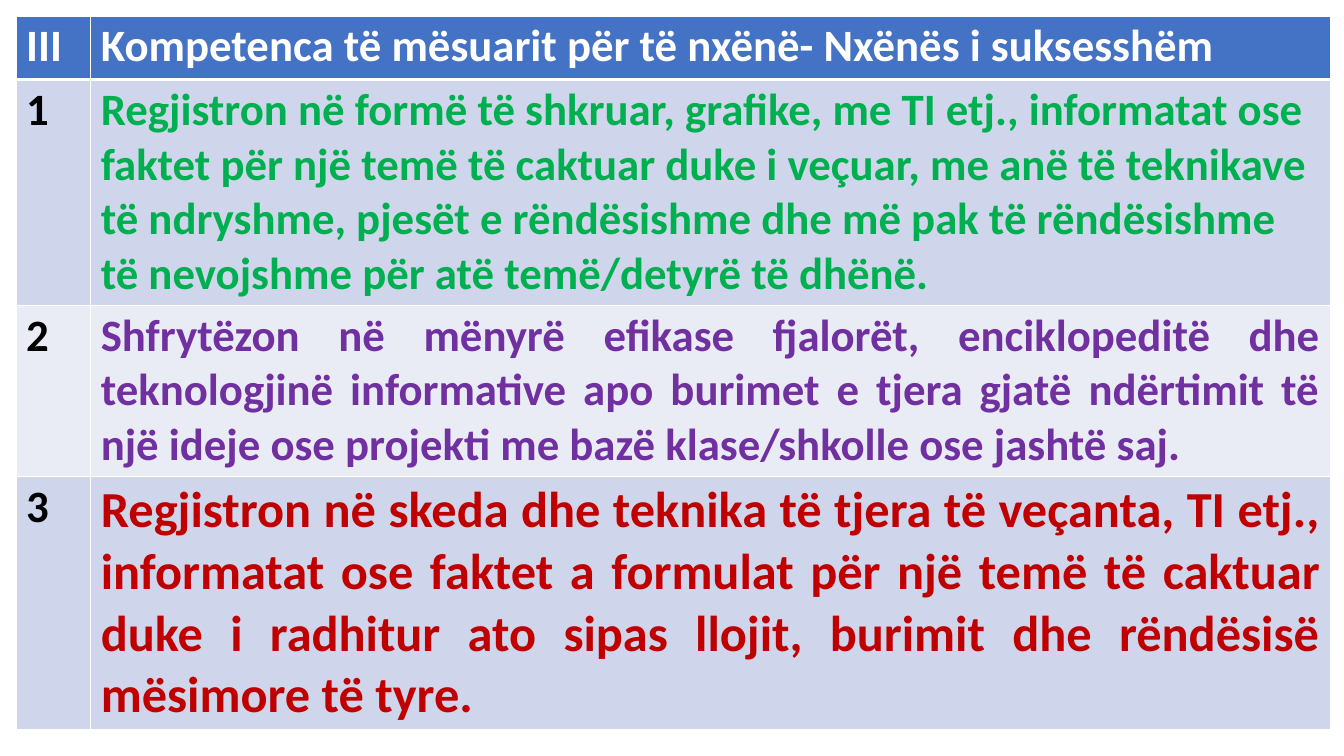
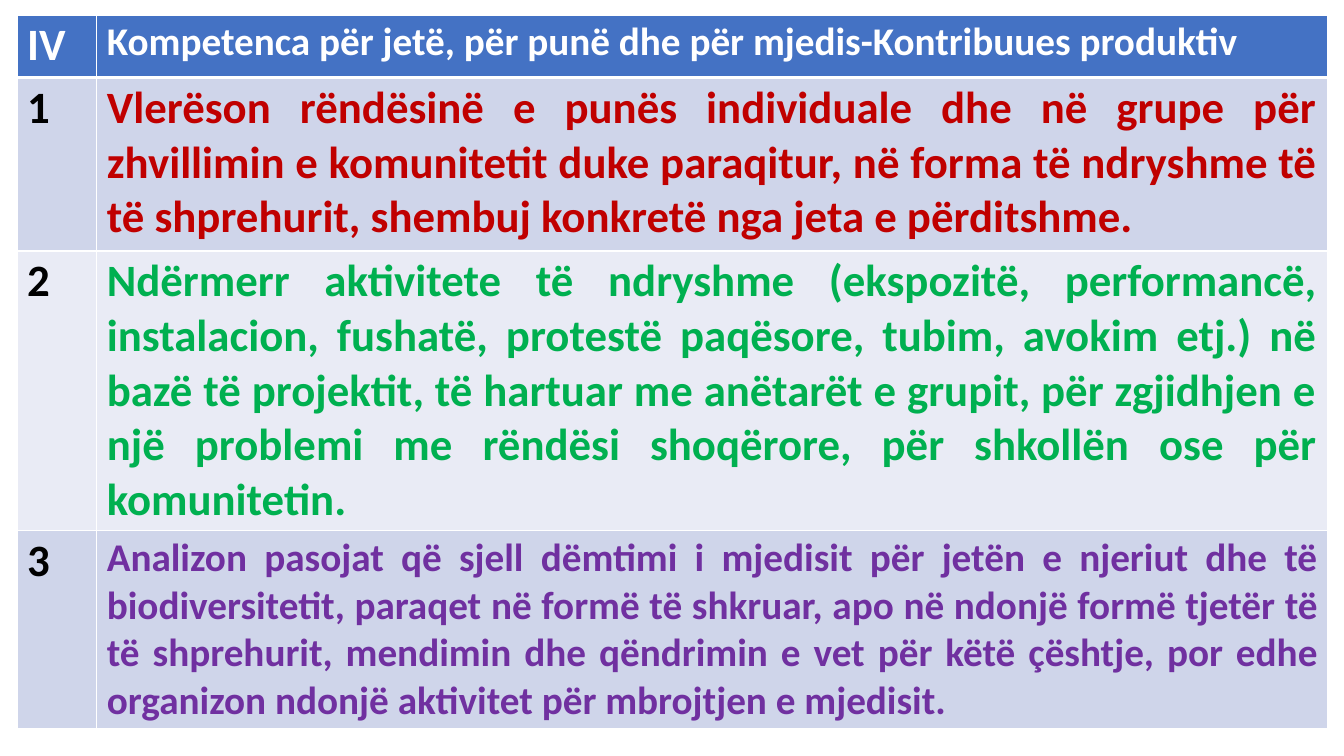
from dataclasses import dataclass

from lxml.etree import SubElement
from pptx import Presentation
from pptx.dml.color import RGBColor
from pptx.enum.text import PP_ALIGN
from pptx.oxml.ns import qn
from pptx.slide import Slide
from pptx.table import _Cell
from pptx.util import Inches, Pt

FONT = "Calibri"
WHITE, BLACK, BLUE = "FFFFFF", "000000", "4472C4"
GREEN, PURPLE, RED = "00B050", "7030A0", "C00000"
BANDS = ("CFD5EA", "E9EBF5")
THIN, THICK = 1, 3


@dataclass
class Row:
    """One numbered line of a competence table."""

    label: str
    text: str
    height: float
    color: str
    size: int = 32
    align: PP_ALIGN = PP_ALIGN.JUSTIFY


@dataclass
class Competence:
    """A table with its place, column widths, heading and rows."""

    left: float
    top: float
    widths: tuple[float, float]
    rows: list[Row]


COMPETENCES = [
    Competence(0.16, 0.16, (0.74, 12.3), [
        Row("III", "Kompetenca të mësuarit për të nxënë- Nxënës i suksesshëm",
            0.63, WHITE, align=PP_ALIGN.LEFT),
        Row("1", "Regjistron në formë të shkruar, grafike, me TI etj., informatat ose "
            "faktet për një temë të caktuar duke i veçuar, me anë të teknikave "
            "të ndryshme, pjesët e rëndësishme dhe më pak të rëndësishme "
            "të nevojshme për atë temë/detyrë të dhënë.",
            2.24, GREEN, align=PP_ALIGN.LEFT),
        Row("2", "Shfrytëzon në mënyrë efikase fjalorët, enciklopeditë dhe "
            "teknologjinë informative apo burimet e tjera gjatë ndërtimit të "
            "një ideje ose projekti me bazë klase/shkolle ose jashtë saj.",
            1.7, PURPLE),
        Row("3", "Regjistron në skeda dhe teknika të tjera të veçanta, TI etj., "
            "informatat ose faktet a formulat për një temë të caktuar "
            "duke i radhitur ato sipas llojit, burimit dhe rëndësisë "
            "mësimore të tyre.",
            2.5, RED, 36),
    ]),
    Competence(0.17, 0.15, (0.79, 12.21), [
        Row("IV", "Kompetenca për jetë, për punë dhe për mjedis-Kontribuues produktiv",
            0.62, WHITE, 28, PP_ALIGN.LEFT),
        Row("1", "Vlerëson rëndësinë e punës individuale dhe në grupe për "
            "zhvillimin e komunitetit duke paraqitur, në forma të ndryshme të "
            "të shprehurit, shembuj konkretë nga jeta e përditshme.",
            1.72, RED),
        Row("2", "Ndërmerr aktivitete të ndryshme (ekspozitë, performancë, "
            "instalacion, fushatë, protestë paqësore, tubim, avokim etj.) në "
            "bazë të projektit, të hartuar me anëtarët e grupit, për zgjidhjen e "
            "një problemi me rëndësi shoqërore, për shkollën ose për komunitetin.",
            2.77, GREEN),
        Row("3", "Analizon pasojat që sjell dëmtimi i mjedisit për jetën e njeriut dhe të "
            "biodiversitetit, paraqet në formë të shkruar, apo në ndonjë formë tjetër të "
            "të shprehurit, mendimin dhe qëndrimin e vet për këtë çështje, por edhe "
            "organizon ndonjë aktivitet për mbrojtjen e mjedisit.",
            1.96, PURPLE, 28),
    ]),
]


def rgb(color: str) -> RGBColor:
    """Turn a hex string into a colour."""
    return RGBColor.from_string(color)


def set_borders(cell: _Cell, top: float, bottom: float) -> None:
    """Draw white borders, thin at the sides."""
    tcPr = cell._tc.get_or_add_tcPr()
    edges = (("a:lnL", THIN), ("a:lnR", THIN), ("a:lnT", top), ("a:lnB", bottom))
    for i, (tag, width) in enumerate(edges):
        ln = SubElement(tcPr, qn(tag), w=str(Pt(width)))
        SubElement(SubElement(ln, qn("a:solidFill")), qn("a:srgbClr"), val=WHITE)
        tcPr.insert(i, ln)


def write_cell(cell: _Cell, text: str, size: int, color: str, fill: str,
               align: PP_ALIGN = PP_ALIGN.LEFT) -> None:
    """Fill a cell and set its bold text."""
    cell.fill.solid()
    cell.fill.fore_color.rgb = rgb(fill)
    cell.margin_left = cell.margin_right = Inches(0.1)
    cell.margin_top = cell.margin_bottom = Inches(0.03)
    p = cell.text_frame.paragraphs[0]
    p.text = text
    p.alignment = align
    p.font.name = FONT
    p.font.size = Pt(size)
    p.font.bold = True
    p.font.color.rgb = rgb(color)


def add_competence(s: Slide, comp: Competence) -> None:
    """Add one competence table to a slide."""
    height = sum(row.height for row in comp.rows)
    table = s.shapes.add_table(
        len(comp.rows), len(comp.widths), Inches(comp.left), Inches(comp.top),
        Inches(sum(comp.widths)), Inches(height)).table
    for col, width in zip(table.columns, comp.widths):
        col.width = Inches(width)
    for i, row in enumerate(comp.rows):
        table.rows[i].height = Inches(row.height)
        fill = BANDS[(i - 1) % 2] if i else BLUE
        label, body = table.cell(i, 0), table.cell(i, 1)
        write_cell(label, row.label, 32, BLACK if i else WHITE, fill)
        write_cell(body, row.text, row.size, row.color, fill, row.align)
        for cell in (label, body):
            set_borders(cell, THICK if i == 1 else THIN, THIN if i else THICK)


def main() -> None:
    """Build the deck and save it."""
    prs = Presentation()
    prs.slide_width, prs.slide_height = Inches(13.33), Inches(7.5)
    for comp in COMPETENCES:
        add_competence(prs.slides.add_slide(prs.slide_layouts[6]), comp)
    prs.save("out.pptx")


if __name__ == "__main__":
    main()
